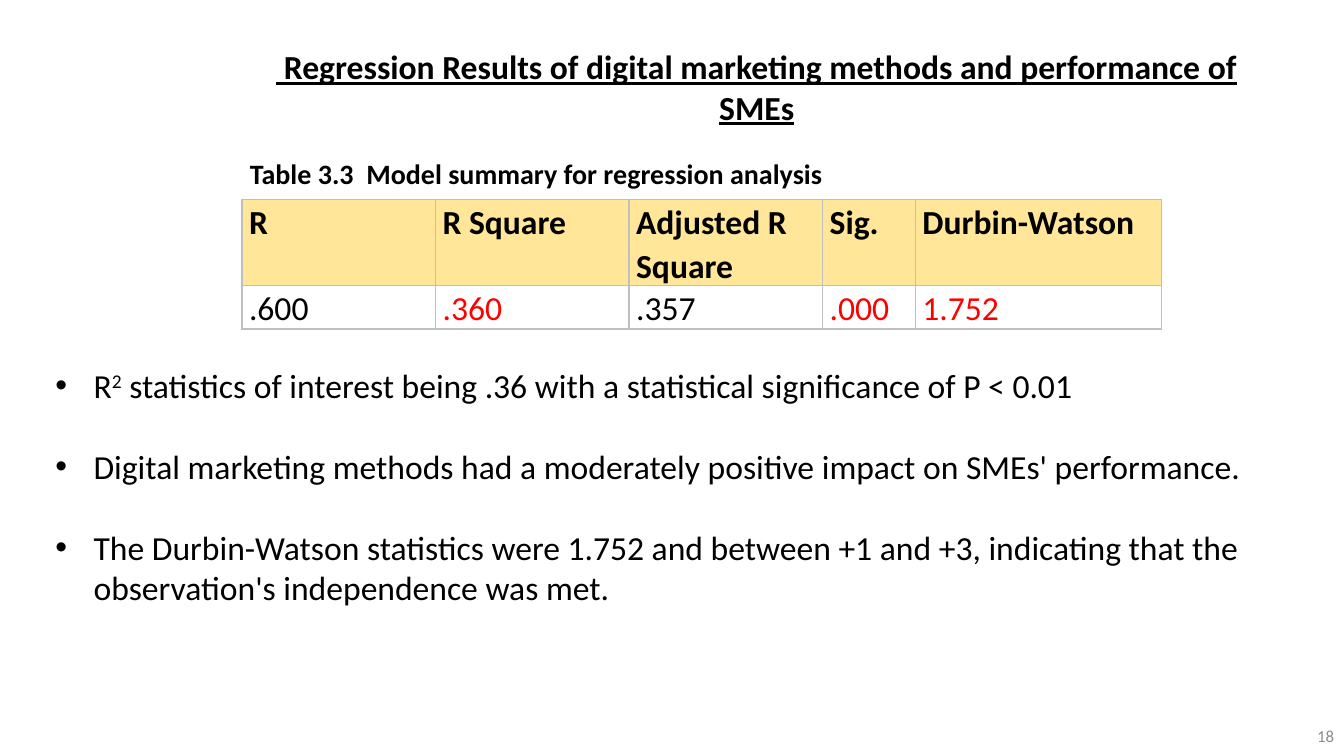
from lxml.etree import SubElement
from pptx import Presentation
from pptx.dml.color import RGBColor
from pptx.enum.text import MSO_ANCHOR, MSO_AUTO_SIZE, PP_ALIGN
from pptx.oxml.ns import qn
from pptx.util import Inches, Pt

BLACK = RGBColor(0x00, 0x00, 0x00)
RED = RGBColor(0xFF, 0x00, 0x00)
GRAY = RGBColor(0x8C, 0x8C, 0x8C)
BORDER = RGBColor(0xBF, 0xBF, 0xBF)
HEADER_FILL = RGBColor(0xFF, 0xE6, 0x99)


def write(paragraph, text, size=24, color=BLACK, bold=False, underline=False,
          align=PP_ALIGN.LEFT, superscript=False):
    paragraph.alignment = align
    run = paragraph.add_run()
    run.text = text
    font = run.font
    font.name, font.size, font.bold = "Calibri", Pt(size), bold
    font.underline = underline
    font.color.rgb = color
    if superscript:
        run._r.get_or_add_rPr().set("baseline", "30000")


def add_box(left, top, width, height, anchor=MSO_ANCHOR.TOP):
    shape = slide.shapes.add_textbox(
        Inches(left), Inches(top), Inches(width), Inches(height))
    shape.text_frame.word_wrap = True
    shape.text_frame.vertical_anchor = anchor
    return shape.text_frame


presentation = Presentation()
presentation.slide_width = Inches(13.33)
presentation.slide_height = Inches(7.5)
slide = presentation.slides.add_slide(presentation.slide_layouts[5])

# Title
title = slide.shapes.title
title.left, title.top = Inches(2.28), Inches(0.41)
title.width, title.height = Inches(10.45), Inches(0.5)
title.text_frame.word_wrap = True
title.text_frame.auto_size = MSO_AUTO_SIZE.NONE
title.text_frame.vertical_anchor = MSO_ANCHOR.TOP
write(title.text_frame.paragraphs[0],
      " Regression Results of digital marketing methods and performance of SMEs",
      bold=True, underline=True, align=PP_ALIGN.CENTER)

# Table caption
caption = add_box(2.38, 1.5, 9.16, 0.44)
write(caption.paragraphs[0], "Table 3.3  Model summary for regression analysis",
      size=20, bold=True)

# Model summary table: heading, value, value colour, column width
columns = [
    ("R", ".600", BLACK, 1.92),
    ("R Square", ".360", RED, 1.92),
    ("Adjusted R Square", ".357", BLACK, 1.92),
    ("Sig.", ".000", RED, 0.92),
    ("Durbin-Watson", "1.752", RED, 2.44),
]
table = slide.shapes.add_table(2, len(columns), Inches(2.4), Inches(1.98),
                               Inches(9.12), Inches(1.07)).table
table.rows[0].height = Inches(0.72)
table.rows[1].height = Inches(0.35)
for column_index, (heading, value, value_color, width) in enumerate(columns):
    table.columns[column_index].width = Inches(width)
    for row_index, text in enumerate((heading, value)):
        is_header = row_index == 0
        cell = table.cell(row_index, column_index)
        cell.margin_left = cell.margin_right = Inches(0.07)
        cell.margin_top = cell.margin_bottom = 0
        paragraph = cell.text_frame.paragraphs[0]
        paragraph.line_spacing = 1.07
        paragraph.space_after = Pt(8)
        write(paragraph, text, bold=is_header,
              color=BLACK if is_header else value_color)
        # Borders come before the fill in the cell properties
        properties = cell._tc.get_or_add_tcPr()
        for side in ("a:lnL", "a:lnR", "a:lnT", "a:lnB"):
            line = SubElement(properties, qn(side), w=str(Pt(1)))
            line_fill = SubElement(line, qn("a:solidFill"))
            SubElement(line_fill, qn("a:srgbClr"), val=str(BORDER))
        if is_header:
            cell.fill.solid()
            cell.fill.fore_color.rgb = HEADER_FILL
        else:
            cell.fill.background()

# Findings: each bullet is a list of (text, superscript) pieces
findings = [
    [("R", False), ("2", True),
     (" statistics of interest being .36 with a statistical significance of P < 0.01",
      False)],
    [("Digital marketing methods had a moderately positive impact on SMEs' performance.",
      False)],
    [("The Durbin-Watson statistics were 1.752 and between +1 and +3, indicating "
      "that the observation's independence was met.", False)],
]
body = add_box(0.45, 3.57, 12.88, 2.52)
for index, pieces in enumerate(findings):
    paragraph = body.add_paragraph() if index else body.paragraphs[0]
    if index:
        paragraph.space_before = Pt(29)
    properties = paragraph._p.get_or_add_pPr()
    properties.set("marL", str(Inches(0.38)))
    properties.set("indent", str(Inches(-0.38)))
    SubElement(properties, qn("a:buFont"), typeface="Arial")
    SubElement(properties, qn("a:buChar"), char="•")
    for text, superscript in pieces:
        write(paragraph, text, superscript=superscript)

# Slide number
number = add_box(10.33, 7.1, 3, 0.4, anchor=MSO_ANCHOR.MIDDLE)
write(number.paragraphs[0], "18", size=12, color=GRAY, align=PP_ALIGN.RIGHT)

presentation.save("out.pptx")
